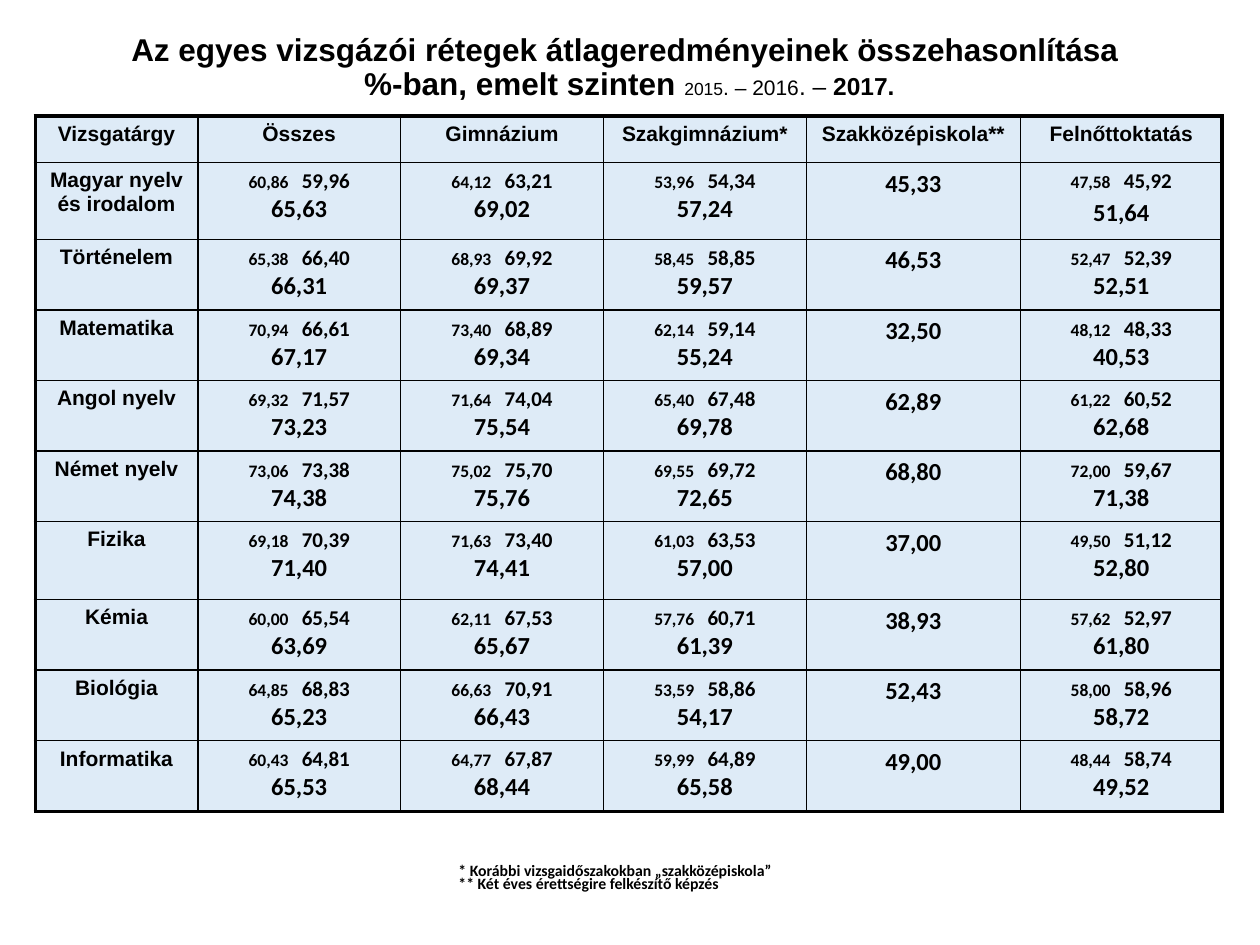
from dataclasses import dataclass
from typing import NamedTuple, Optional

import pptx
import pptx.enum.text
import pptx.oxml
import pptx.util
from pptx.util import Inches

COLORS = {"text": "000000", "border": "000000", "cell": "DEEBF7"}
CENTER = pptx.enum.text.PP_ALIGN.CENTER
MIDDLE = pptx.enum.text.MSO_ANCHOR.MIDDLE

COLUMN_WIDTHS = [1.29, 1.61, 1.61, 1.61, 1.7, 1.6]
ROW_HEIGHTS = [0.37, 0.61] + [0.56] * 4 + [0.62] + [0.56] * 3
OUTER_BORDER, INNER_BORDER = 2.25, 1
YEAR_GAP = 5.4  # points added to the space between two years


class TextStyle(NamedTuple):
    size: float
    font: str = "Calibri"
    bold: bool = True


LABEL = TextStyle(12, "Arial")
YEAR_2015, YEAR_2016, YEAR_2017 = TextStyle(10), TextStyle(12), TextStyle(14)
NOTE = TextStyle(9)


@dataclass
class Subject:
    """Averages per school type, each as '2015 2016 2017' or '2017' alone."""
    name: str
    averages: list[str]


HEADERS = ["Vizsgatárgy", "Összes", "Gimnázium", "Szakgimnázium*",
           "Szakközépiskola**", "Felnőttoktatás"]
SUBJECTS = [
    Subject("Magyar nyelv és irodalom", ["60,86 59,96 65,63", "64,12 63,21 69,02",
            "53,96 54,34 57,24", "45,33", "47,58 45,92 51,64"]),
    Subject("Történelem", ["65,38 66,40 66,31", "68,93 69,92 69,37",
            "58,45 58,85 59,57", "46,53", "52,47 52,39 52,51"]),
    Subject("Matematika", ["70,94 66,61 67,17", "73,40 68,89 69,34",
            "62,14 59,14 55,24", "32,50", "48,12 48,33 40,53"]),
    Subject("Angol nyelv", ["69,32 71,57 73,23", "71,64 74,04 75,54",
            "65,40 67,48 69,78", "62,89", "61,22 60,52 62,68"]),
    Subject("Német nyelv", ["73,06 73,38 74,38", "75,02 75,70 75,76",
            "69,55 69,72 72,65", "68,80", "72,00 59,67 71,38"]),
    Subject("Fizika", ["69,18 70,39 71,40", "71,63 73,40 74,41",
            "61,03 63,53 57,00", "37,00", "49,50 51,12 52,80"]),
    Subject("Kémia", ["60,00 65,54 63,69", "62,11 67,53 65,67",
            "57,76 60,71 61,39", "38,93", "57,62 52,97 61,80"]),
    Subject("Biológia", ["64,85 68,83 65,23", "66,63 70,91 66,43",
            "53,59 58,86 54,17", "52,43", "58,00 58,96 58,72"]),
    Subject("Informatika", ["60,43 64,81 65,53", "64,77 67,87 68,44",
            "59,99 64,89 65,58", "49,00", "48,44 58,74 49,52"]),
]


def add_run(paragraph, text: str, style: TextStyle, tracking: Optional[float] = None) -> None:
    run = paragraph.add_run()
    run.text = text
    font = run.font
    font.name, font.bold = style.font, style.bold
    font.size = pptx.util.Pt(style.size)
    font.color.rgb = pptx.dml.color.RGBColor.from_string(COLORS["text"])
    if tracking is not None:
        run.font._element.set("spc", str(round(tracking * 100)))


def set_border(cell, side: str, width: float) -> None:
    line = pptx.oxml.parse_xml(
        f'<a:ln{side} xmlns:a="http://schemas.openxmlformats.org/drawingml/2006/main"'
        f' w="{pptx.util.Pt(width)}"><a:solidFill><a:srgbClr val="{COLORS["border"]}"/>'
        f'</a:solidFill></a:ln{side}>')
    cell._tc.get_or_add_tcPr().append(line)


def format_cell(cell, row: int, column: int) -> None:
    outer_sides = {"L": column == 0, "R": column == len(COLUMN_WIDTHS) - 1,
                   "T": row == 0, "B": row == len(ROW_HEIGHTS) - 1}
    for side, is_outer in outer_sides.items():
        set_border(cell, side, OUTER_BORDER if is_outer else INNER_BORDER)
    cell.fill.solid()
    cell.fill.fore_color.rgb = pptx.dml.color.RGBColor.from_string(COLORS["cell"])


def write_label(cell, text: str) -> None:
    paragraph = cell.text_frame.paragraphs[0]
    paragraph.alignment = CENTER
    add_run(paragraph, text, LABEL)


def write_averages(cell, averages: str) -> None:
    *earlier, latest = averages.split()
    paragraph = cell.text_frame.paragraphs[0]
    paragraph.alignment = CENTER
    if earlier:
        add_run(paragraph, earlier[0], YEAR_2015)
        add_run(paragraph, " ", YEAR_2015, YEAR_GAP)
        add_run(paragraph, earlier[1], YEAR_2016)
        paragraph = cell.text_frame.add_paragraph()
        paragraph.alignment = CENTER
        paragraph.space_before = pptx.util.Pt(0)
    add_run(paragraph, latest, YEAR_2017)


def add_title(slide) -> None:
    title = slide.shapes.title
    title.left, title.top = Inches(0.43), Inches(0)
    title.width, title.height = Inches(9.13), Inches(1.09)
    frame = title.text_frame
    frame.word_wrap = True
    frame.auto_size = pptx.enum.text.MSO_AUTO_SIZE.NONE
    frame.vertical_anchor = MIDDLE
    paragraph = frame.paragraphs[0]
    paragraph.alignment = CENTER
    paragraph.line_spacing = 0.9
    heading = TextStyle(18, "Arial")
    add_run(paragraph, "Az egyes vizsgázói rétegek átlageredményeinek összehasonlítása ", heading)
    paragraph.add_line_break()
    add_run(paragraph, "%-ban, emelt szinten ", heading)
    add_run(paragraph, "2015", TextStyle(10, "Arial", False))
    add_run(paragraph, ". – 2016", TextStyle(12, "Arial", False))
    add_run(paragraph, ". – ", TextStyle(14, "Arial", False))
    add_run(paragraph, "2017.", TextStyle(14, "Arial"))


def add_results_table(slide) -> None:
    table = slide.shapes.add_table(
        len(ROW_HEIGHTS), len(COLUMN_WIDTHS), Inches(0.28), Inches(0.92),
        Inches(sum(COLUMN_WIDTHS)), Inches(sum(ROW_HEIGHTS))).table
    table.first_row = table.horz_banding = False
    for column, width in zip(table.columns, COLUMN_WIDTHS):
        column.width = Inches(width)
    for row, height in zip(table.rows, ROW_HEIGHTS):
        row.height = Inches(height)
    for row in range(len(ROW_HEIGHTS)):
        for column in range(len(COLUMN_WIDTHS)):
            format_cell(table.cell(row, column), row, column)

    for column, header in enumerate(HEADERS):
        write_label(table.cell(0, column), header)
    for row, subject in enumerate(SUBJECTS, start=1):
        write_label(table.cell(row, 0), subject.name)
        for column, averages in enumerate(subject.averages, start=1):
            write_averages(table.cell(row, column), averages)
    adult_language = table.cell(1, len(COLUMN_WIDTHS) - 1)
    adult_language.text_frame.paragraphs[1].space_before = pptx.util.Pt(2.4)


def add_footnotes(slide) -> None:
    box = slide.shapes.add_textbox(Inches(3.54), Inches(6.82), Inches(3.1), Inches(0.31))
    frame = box.text_frame
    frame.word_wrap = True
    frame.vertical_anchor = MIDDLE
    paragraph = frame.paragraphs[0]
    paragraph.line_spacing = 0.7
    add_run(paragraph, "* Korábbi vizsgaidőszakokban „szakközépiskola”", NOTE)
    paragraph.add_line_break()
    add_run(paragraph, "** Két éves érettségire felkészítő képzés", NOTE)


def main() -> None:
    presentation = pptx.Presentation()
    presentation.slide_width, presentation.slide_height = Inches(10), Inches(7.5)
    slide = presentation.slides.add_slide(presentation.slide_layouts.get_by_name("Title Only"))
    add_title(slide)
    add_results_table(slide)
    add_footnotes(slide)
    presentation.save("out.pptx")


if __name__ == "__main__":
    main()
